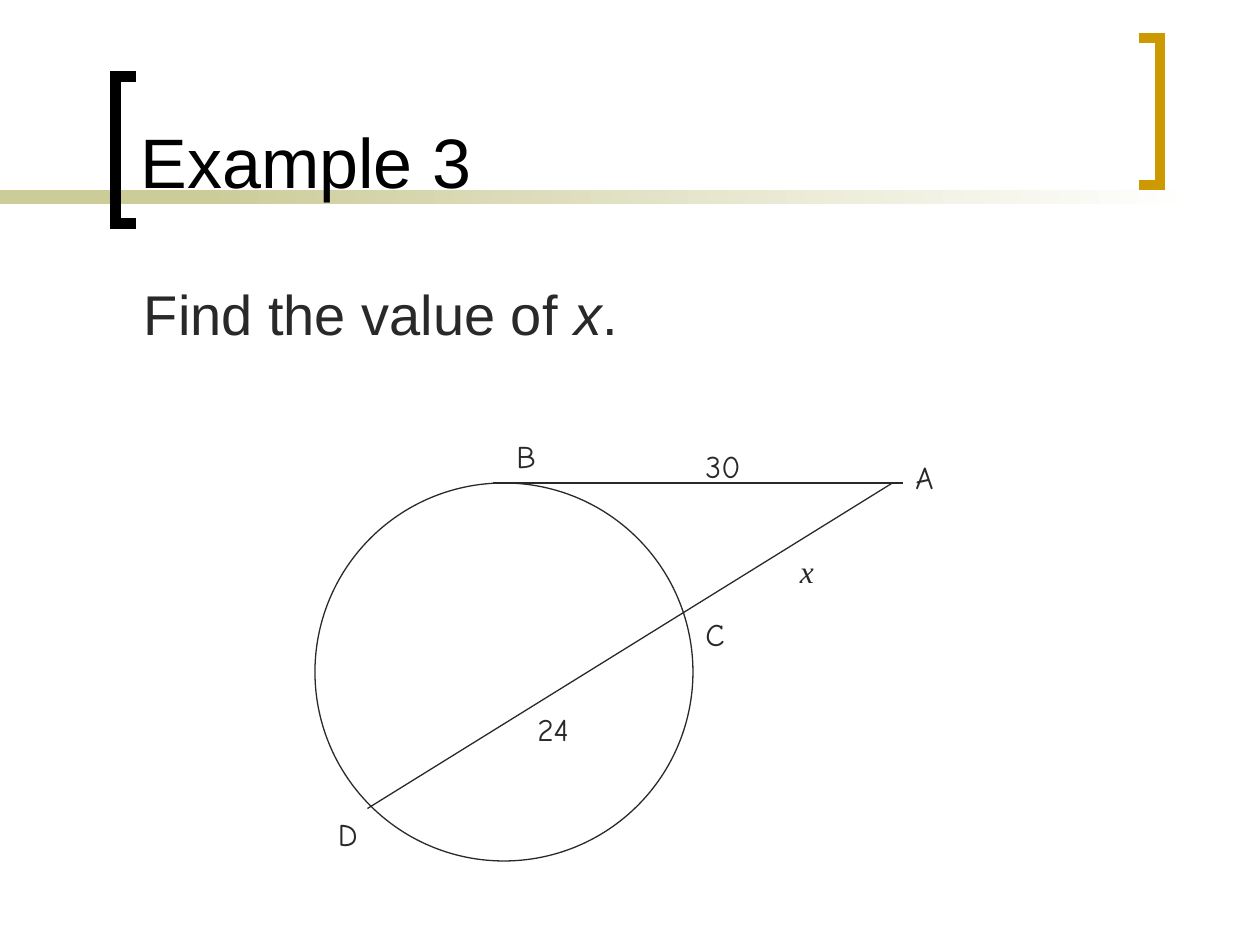
from dataclasses import dataclass

from lxml import etree
from pptx import Presentation
from pptx.dml.color import RGBColor
from pptx.enum.shapes import MSO_CONNECTOR, MSO_SHAPE
from pptx.enum.text import MSO_ANCHOR, MSO_AUTO_SIZE, PP_ALIGN
from pptx.oxml.ns import qn
from pptx.util import Emu, Pt

RECT, OVAL = MSO_SHAPE.RECTANGLE, MSO_SHAPE.OVAL
STRAIGHT = MSO_CONNECTOR.STRAIGHT
BOTTOM, TOP = MSO_ANCHOR.BOTTOM, MSO_ANCHOR.TOP
LEFT = PP_ALIGN.LEFT
NO_AUTOFIT = MSO_AUTO_SIZE.NONE
PX = 7620  # 120 px to the inch


@dataclass(frozen=True)
class Theme:
    black: str = "000000"
    ink: str = "292929"
    gold: str = "CC9900"
    olive: str = "CCCC99"
    white: str = "FFFFFF"
    sans: str = "Arial"
    label: str = "Comic Neue"
    serif: str = "Times New Roman"
    title_size: int = 40
    body_size: int = 32
    label_size: int = 18
    thin: float = 0.75
    thick: int = 6


THEME = Theme()
LABELS = [
    ("B", 480, 410), ("A", 860, 430), ("D", 310, 770), ("C", 660, 580),
    ("30", 660, 420), ("24", 500, 670), ("x", 750, 520),
]


def px(*lengths):
    return [Emu(n * PX) for n in lengths]


def rgb(value):
    return RGBColor.from_string(value)


def set_line(sp, color, width):
    sp.line.color.rgb = rgb(color)
    sp.line.width = Pt(width)


def add_run(p, text, font, size, color, italic=False):
    r = p.add_run()
    r.text = text
    values = {"name": font, "size": Pt(size), "italic": italic}
    for name, value in values.items():
        setattr(r.font, name, value)
    r.font.color.rgb = rgb(color)


def add_band(s, box, start, end):
    """Add a strip that fades from start to end, left to right."""
    sp = s.shapes.add_shape(RECT, *px(*box))
    sp.shadow.inherit = False
    sp.line.fill.background()
    sp.fill.gradient()
    sp.fill.gradient_angle = 0
    for stop, color in zip(sp.fill.gradient_stops, (start, end)):
        stop.color.rgb = rgb(color)
    for stop, position in zip(sp.fill.gradient_stops, (0, 1)):
        stop.position = position


def add_bracket(s, open_x, spine_x, top, color):
    bottom = top + 140
    builder = s.shapes.build_freeform(open_x, top, scale=PX)
    builder.add_line_segments(
        [(spine_x, top), (spine_x, bottom), (open_x, bottom)], close=False)
    sp = builder.convert_to_shape()
    sp.shadow.inherit = False
    sp.fill.background()
    set_line(sp, color, THEME.thick)
    etree.SubElement(sp.line._get_or_add_ln(), qn("a:miter"), lim="800000")


def place_text(s, sp, box, anchor):
    """Bring a placeholder to the front, position it and return its paragraph."""
    s.shapes._spTree.append(sp._element)
    for name, value in zip(("left", "top", "width", "height"), px(*box)):
        setattr(sp, name, value)
    tf = sp.text_frame
    tf.auto_size = NO_AUTOFIT
    tf.vertical_anchor = anchor
    p = tf.paragraphs[0]
    p.alignment = LEFT
    return p


def add_circle(s, x, y, diameter):
    sp = s.shapes.add_shape(OVAL, *px(x, y, diameter, diameter))
    sp.shadow.inherit = False
    sp.fill.background()
    set_line(sp, THEME.ink, THEME.thin)


def add_segment(s, start, end):
    line = s.shapes.add_connector(STRAIGHT, *px(*start, *end))
    set_line(line, THEME.ink, THEME.thin)
    etree.SubElement(line._element.spPr, qn("a:effectLst"))


def add_label(s, text, x, y):
    tf = s.shapes.add_textbox(*px(x, y, 80, 48)).text_frame
    tf.word_wrap = True
    p = tf.paragraphs[0]
    p.space_before = Pt(2)
    unknown = text == "x"
    font = THEME.serif if unknown else THEME.label
    add_run(p, text, font, THEME.label_size, THEME.ink, unknown)


def add_decoration(s):
    add_band(s, (0, 181, 280, 13), THEME.olive, THEME.olive)
    add_band(s, (190, 181, 950, 13), THEME.olive, THEME.white)
    add_bracket(s, 130, 110, 73, THEME.black)
    add_bracket(s, 1085, 1105, 36, THEME.gold)


def add_texts(s):
    title, body = s.placeholders
    p = place_text(s, title, (122, 13, 942, 186), BOTTOM)
    add_run(p, "Example 3", THEME.sans, THEME.title_size, THEME.black)

    p = place_text(s, body, (125, 260, 1005, 540), TOP)
    p.space_before = Pt(3)
    pPr = p._p.get_or_add_pPr()
    indent = 59 * PX
    pPr.set("marL", str(indent))
    pPr.set("indent", str(-indent))
    etree.SubElement(pPr, qn("a:buNone"))
    for text, italic in (("Find the value of ", False), ("x", True), (".", False)):
        add_run(p, text, THEME.sans, THEME.body_size, THEME.ink, italic)


def main():
    prs = Presentation()
    prs.slide_width, prs.slide_height = px(1200, 900)
    s = prs.slides.add_slide(prs.slide_layouts[1])
    add_decoration(s)
    add_texts(s)
    add_circle(s, 300, 460, 360)
    add_segment(s, (860, 460), (470, 460))
    add_segment(s, (850, 460), (350, 770))
    for label in LABELS:
        add_label(s, *label)
    prs.save("out.pptx")


if __name__ == "__main__":
    main()
